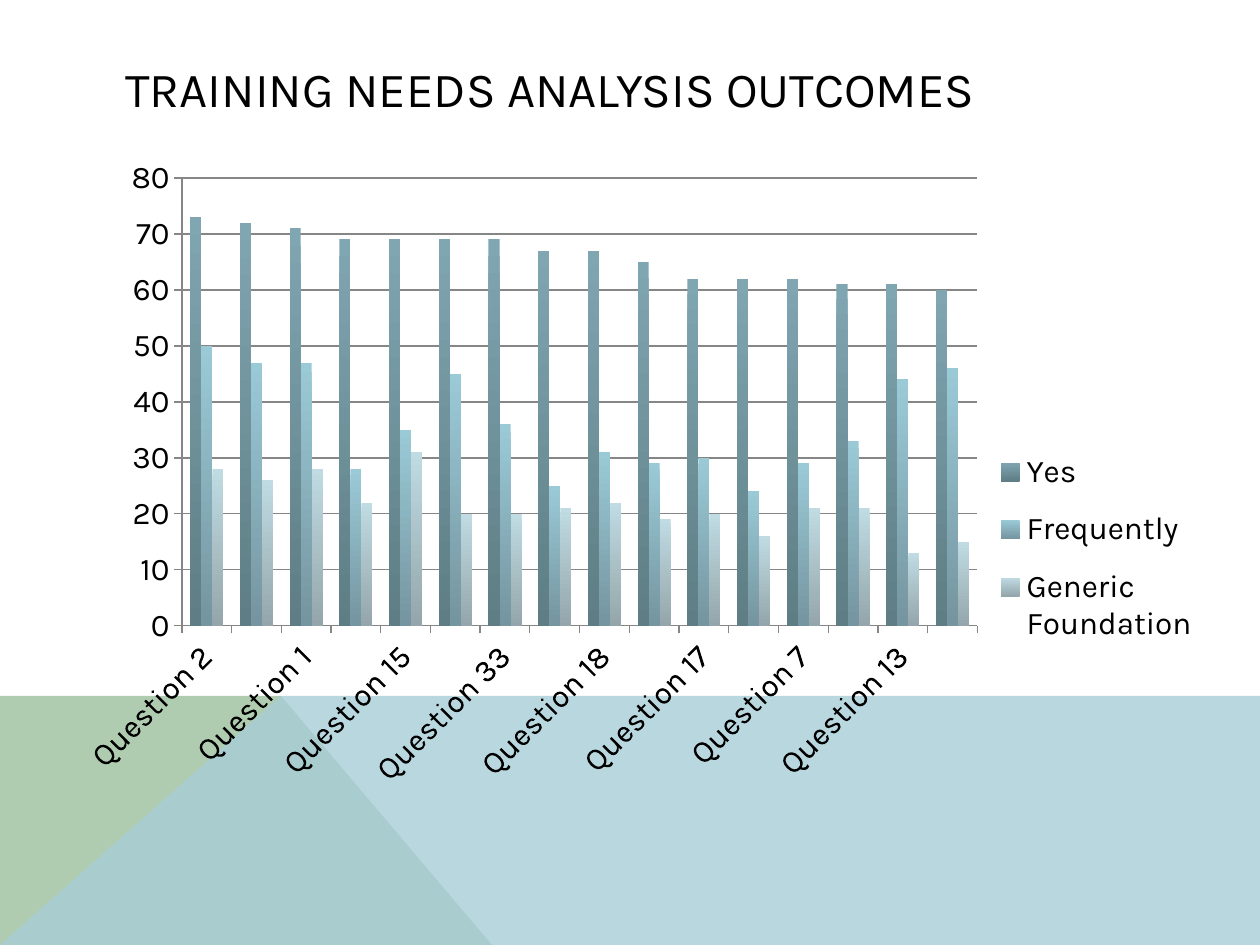
from lxml import etree
from pptx import Presentation
from pptx.chart.data import CategoryChartData as ChartData
from pptx.dml.color import RGBColor as Rgb
from pptx.enum.chart import XL_CHART_TYPE as Kind, XL_LEGEND_POSITION as Side, XL_TICK_MARK as Tick
from pptx.enum.text import MSO_ANCHOR as Anchor
from pptx.oxml.ns import qn
from pptx.util import Emu, Pt

SCALE = 914400 / 126
FONT = "Karla"
HEX = {
    "ink": "000000", "line": "868686", "green": "B0CCB0", "blue": "A8CDD7",
}
FRAME = (84, 151, 1121, 668)
PLOT = (180, 178, 797, 448)
KEY = (992, 433, 208, 230)
ASKED = (2, 14, 1, 3, 15, 31, 33, 4, 18, 32, 17, 20, 7, 26, 13, 10)
# name, top and bottom colour of the bars, values
SERIES = (
    ("Yes", "80A6B2", "5E7D84",
     (73, 72, 71, 69, 69, 69, 69, 67, 67, 65, 62, 62, 62, 61, 61, 60)),
    ("Frequently", "9ACAD6", "7595A0",
     (50, 47, 47, 28, 35, 45, 36, 25, 31, 29, 30, 24, 29, 33, 44, 46)),
    ("Generic Foundation", "C0DBE2", "94A6AB",
     (28, 26, 28, 22, 31, 20, 20, 21, 22, 19, 20, 16, 21, 21, 13, 15)),
)


def px(n):
    return Emu(round(n * SCALE))


def rgb(name):
    return Rgb.from_string(HEX[name])


def add_area(slide, points, color, alpha=100):
    pen = slide.shapes.build_freeform(*points[0], scale=SCALE)
    pen.add_line_segments(points[1:], close=True)
    area = pen.convert_to_shape()
    area.shadow.inherit = False
    area.line.fill.background()
    area.fill.solid()
    area.fill.fore_color.rgb = rgb(color)
    if alpha < 100:
        tone = area._element.spPr.find(".//" + qn("a:srgbClr"))
        etree.SubElement(tone, qn("a:alpha"), val=str(alpha * 1000))


def add_title(slide, text, box):
    frame = slide.shapes.add_textbox(*map(px, box)).text_frame
    frame.word_wrap = True
    frame.vertical_anchor = Anchor.MIDDLE
    frame.text = text
    style(frame.paragraphs[0].runs[0].font, 28)


def style(font, size):
    font.name = FONT
    font.size = Pt(size)
    font.color.rgb = rgb("ink")


def place(box, index, inner=False):
    """Return a manual layout for a chart part, put in at index of its parent."""
    parent, area = box
    for old in parent.findall(qn("c:layout")):
        parent.remove(old)
    layout = etree.Element(qn("c:layout"))
    parent.insert(index, layout)
    manual = etree.SubElement(layout, qn("c:manualLayout"))
    left, top, wide, high = FRAME
    x, y, w, h = area
    parts = [("xMode", "edge"), ("yMode", "edge"),
             ("x", (x - left) / wide), ("y", (y - top) / high),
             ("w", w / wide), ("h", h / high)]
    if inner:
        parts.insert(0, ("layoutTarget", "inner"))
    for tag, val in parts:
        etree.SubElement(manual, qn("c:" + tag), val=str(val))


def set_axes(chart):
    cat, val = chart.category_axis, chart.value_axis
    for axis in (cat, val):
        axis.major_tick_mark = Tick.OUTSIDE
        axis.minor_tick_mark = Tick.NONE
        axis.format.line.color.rgb = rgb("line")
        style(axis.tick_labels.font, 18)
    cat._element.txPr.find(qn("a:bodyPr")).set("rot", "-2700000")
    val.minimum_scale, val.maximum_scale, val.major_unit = 0, 80, 10
    val.has_major_gridlines = True
    val.major_gridlines.format.line.color.rgb = rgb("line")


def set_bars(plot):
    plot.gap_width, plot.overlap = 150, 0
    plot.vary_by_categories = False
    for bars, (_, *tones, _) in zip(plot.series, SERIES):
        fill = bars.format.fill
        fill.gradient()
        fill.gradient_angle = 270
        for stop, tone in zip(fill.gradient_stops, tones):
            stop.color.rgb = Rgb.from_string(tone)


def add_bars(slide):
    data = ChartData()
    data.categories = [f"Question {n}" for n in ASKED]
    for name, _, _, vals in SERIES:
        data.add_series(name, vals)
    chart = slide.shapes.add_chart(
        Kind.COLUMN_CLUSTERED, *map(px, FRAME), data).chart
    style(chart.font, 18)
    chart.has_title = False
    set_axes(chart)
    set_bars(chart.plots[0])
    chart.has_legend = True
    key = chart.legend
    key.position = Side.RIGHT
    key.include_in_layout = False
    style(key.font, 18)
    place((key._element, KEY), 1)
    place((chart._chartSpace.chart.plotArea, PLOT), 0, inner=True)


def main():
    deck = Presentation()
    deck.slide_width, deck.slide_height = px(1260), px(945)
    slide = deck.slides.add_slide(deck.slide_layouts[6])
    add_area(slide, [(0, 945), (0, 696), (281, 696), (492, 945)], "green")
    add_area(slide, [(0, 945), (281, 696), (1260, 696), (1260, 945)], "blue", 80)
    add_title(slide, "TRAINING NEEDS ANALYSIS OUTCOMES", (113, 50, 1036, 76))
    add_bars(slide)
    deck.save("out.pptx")


if __name__ == "__main__":
    main()
